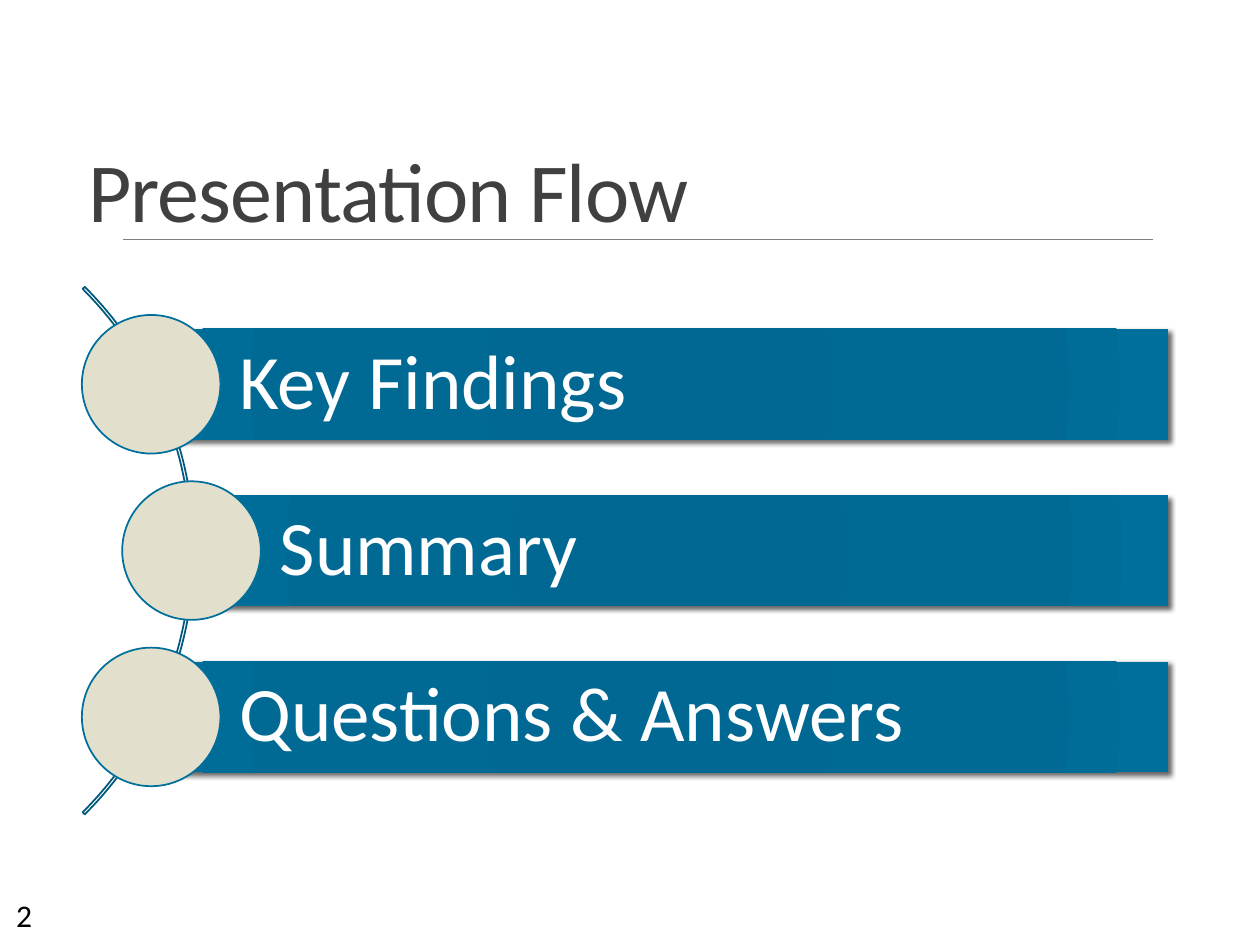
from dataclasses import dataclass

from pptx import Presentation
from pptx import oxml
from pptx.dml.color import RGBColor
from pptx.enum import shapes, text
from pptx.oxml import ns
from pptx.util import Inches, Pt


@dataclass(frozen=True)
class Theme:
    font: str = "Calibri"
    title: str = "404040"
    rule: str = "808080"
    arc: str = "00597C"
    disc: str = "E2DFCC"
    edge: str = "006F9B"
    label: str = "FFFFFF"
    number: str = "000000"
    bar_stops: tuple = ((0, "006790"), (34, "006892"), (70, "006A94"), (100, "006F9B"))
    title_size: int = 48
    label_size: int = 44
    number_size: int = 18


THEME = Theme()
TOPICS = ("Key Findings", "Summary", "Questions & Answers")


def color(code):
    return RGBColor.from_string(code)


def write(frame, words, size, code, anchor, line_spacing=1.0):
    frame.word_wrap = True
    frame.vertical_anchor = anchor
    paragraph = frame.paragraphs[0]
    paragraph.alignment = text.PP_ALIGN.LEFT
    paragraph.line_spacing = line_spacing
    run = paragraph.add_run()
    run.text = words
    run.font.name = THEME.font
    run.font.size = Pt(size)
    run.font.color.rgb = color(code)
    return run


def add_plain_shape(slide, kind, left, top, width, height):
    shape = slide.shapes.add_shape(
        kind, Inches(left), Inches(top), Inches(width), Inches(height))
    shape.shadow.inherit = False
    return shape


def outline(shape, code):
    shape.line.color.rgb = color(code)
    shape.line.width = Pt(1)


def shade_bar(bar):
    bar.line.fill.background()
    stops = "".join(
        f'<a:gs pos="{place * 1000}"><a:srgbClr val="{code}"/></a:gs>'
        for place, code in THEME.bar_stops)
    gradient = oxml.parse_xml(
        f'<a:gradFill {ns.nsdecls("a")} rotWithShape="1"><a:gsLst>{stops}</a:gsLst>'
        '<a:path path="circle"><a:fillToRect l="100000" t="100000" r="100000" b="100000"/>'
        '</a:path></a:gradFill>')
    shadow = oxml.parse_xml(
        f'<a:outerShdw {ns.nsdecls("a")} blurRad="{Pt(3)}" dist="{Pt(2)}" dir="2700000" '
        'algn="tl" rotWithShape="0"><a:srgbClr val="000000"><a:alpha val="60000"/>'
        '</a:srgbClr></a:outerShdw>')
    properties = bar._element.spPr
    properties.find(ns.qn("a:ln")).addprevious(gradient)
    properties.find(ns.qn("a:effectLst")).append(shadow)


def add_title(slide, left, top, width, height):
    box = slide.shapes.add_textbox(
        Inches(left), Inches(top), Inches(width), Inches(height))
    run = write(box.text_frame, "Presentation Flow", THEME.title_size,
                THEME.title, text.MSO_ANCHOR.BOTTOM, 0.85)
    run._r.get_or_add_rPr().set("spc", "-50")


def add_title_rule(slide, left, top, width):
    rule = slide.shapes.add_connector(
        shapes.MSO_CONNECTOR.STRAIGHT,
        Inches(left), Inches(top), Inches(left + width), Inches(top))
    rule.line.color.rgb = color(THEME.rule)
    rule.line.width = Pt(0.5)
    rule._element.spPr.append(oxml.parse_xml(f'<a:effectLst {ns.nsdecls("a")}/>'))


def add_arc(slide, right, middle, diameter):
    arc = add_plain_shape(slide, shapes.MSO_SHAPE.BLOCK_ARC, right - diameter,
                          middle - diameter / 2, diameter, diameter)
    for index, value in enumerate((189, 27, 0.004)):
        arc.adjustments[index] = value
    arc.fill.background()
    outline(arc, THEME.arc)


def add_topic(slide, words, left, middle, right, disc_size):
    bar_height = disc_size * 0.8
    bar_left = left + disc_size / 2
    bar = add_plain_shape(slide, shapes.MSO_SHAPE.RECTANGLE, bar_left,
                          middle - bar_height / 2, right - bar_left, bar_height)
    shade_bar(bar)
    frame = bar.text_frame
    frame.margin_left = Inches(0.7)
    frame.margin_top = frame.margin_right = frame.margin_bottom = Inches(0.12)
    write(frame, words, THEME.label_size, THEME.label, text.MSO_ANCHOR.MIDDLE, 0.9)

    disc = add_plain_shape(slide, shapes.MSO_SHAPE.OVAL, left,
                           middle - disc_size / 2, disc_size, disc_size)
    disc.fill.solid()
    disc.fill.fore_color.rgb = color(THEME.disc)
    outline(disc, THEME.edge)


def add_topic_list(slide, left, top, width, height):
    disc_size = height / 3.8
    pitch = disc_size * 1.2
    middle = top + height / 2
    add_arc(slide, left + 0.89, middle, 5.92)
    for index, words in enumerate(TOPICS):
        offset = index - 1
        indent = 0 if offset else 0.32
        add_topic(slide, words, left + indent, middle + offset * pitch,
                  left + width, disc_size)


def add_slide_number(slide, left, top, width, height):
    box = slide.shapes.add_textbox(
        Inches(left), Inches(top), Inches(width), Inches(height))
    write(box.text_frame, "2", THEME.number_size, THEME.number, text.MSO_ANCHOR.TOP)


def main():
    deck = Presentation()
    deck.slide_width, deck.slide_height = Inches(10), Inches(7.5)
    slide = deck.slides.add_slide(deck.slide_layouts[6])
    add_title_rule(slide, 0.98, 1.9, 8.17)
    add_topic_list(slide, 0.65, 2.28, 8.62, 4.18)
    add_title(slide, 0.6, 0.36, 8.25, 1.59)
    add_slide_number(slide, 0.03, 7.06, 0.37, 0.4)
    deck.save("out.pptx")


if __name__ == "__main__":
    main()
